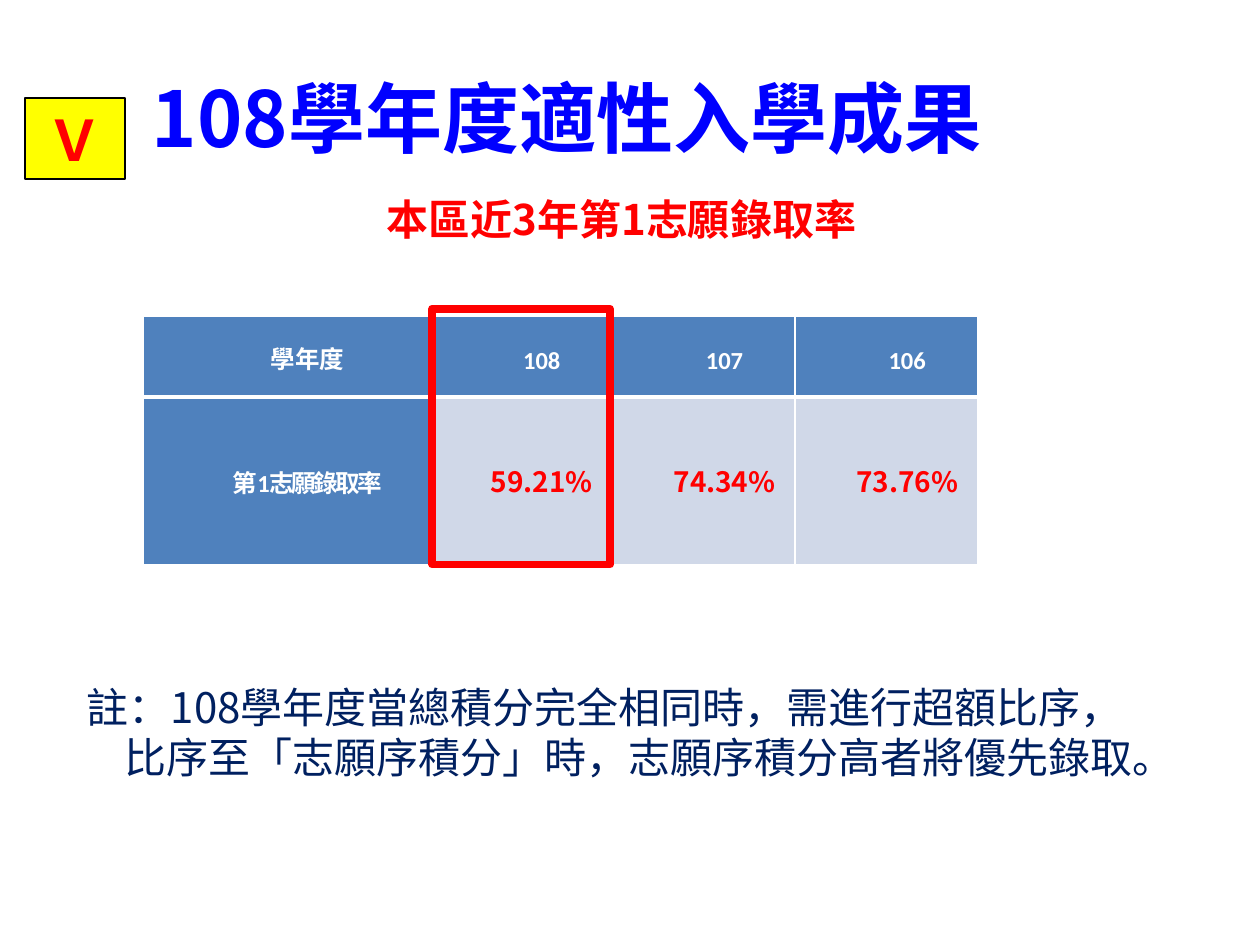
from dataclasses import dataclass

from lxml import etree
from pptx import Presentation
from pptx import util as u
from pptx.dml.color import RGBColor
from pptx.enum import shapes, text
from pptx.oxml.ns import qn


@dataclass(frozen=True)
class Theme:
    blue: str = "0000FF"
    red: str = "FF0000"
    navy: str = "002060"
    yellow: str = "FFFF00"
    black: str = "000000"
    white: str = "FFFFFF"
    header: str = "4F81BD"
    band: str = "D0D8E8"
    sans: str = "Noto Sans CJK SC"
    badge_font: str = "Noto Sans CJK TC"
    label_font: str = "Calibri"
    title_size: int = 44
    badge_size: int = 32
    body_size: int = 24
    rate_size: int = 16
    label_size: int = 14


THEME = Theme()


def rgb(value):
    return RGBColor.from_string(value)


def place(left, top, width, height):
    return [u.Pt(value) for value in (left, top, width, height)]


def add_run(paragraph, wording, size, color, bold=True, latin=THEME.sans,
            east_asian=THEME.sans, spacing=None):
    run = paragraph.add_run()
    run.text = wording
    run.font.size = u.Pt(size)
    run.font.bold = bold
    run.font.color.rgb = rgb(color)
    run.font.name = latin
    properties = run.font._element
    etree.SubElement(properties, qn("a:ea")).set("typeface", east_asian)
    if spacing is not None:
        properties.set("spc", str(int(spacing * 100)))


def set_indent(paragraph, points):
    properties = paragraph._p.get_or_add_pPr()
    properties.set("marL", str(u.Pt(points)))
    properties.set("indent", "0")


def prepare_frame(frame):
    frame.word_wrap = True
    frame.auto_size = text.MSO_AUTO_SIZE.NONE
    frame.vertical_anchor = text.MSO_ANCHOR.MIDDLE


def add_title(slide, wording):
    title = slide.shapes.title
    title.left, title.top, title.width, title.height = place(0, 21.6, 648, 90)
    prepare_frame(title.text_frame)
    paragraph = title.text_frame.paragraphs[0]
    paragraph.alignment = text.PP_ALIGN.CENTER
    add_run(paragraph, wording, THEME.title_size, THEME.blue)


def add_text(slide, box, lines, color, bold, align, hanging=0):
    frame = slide.shapes.add_textbox(*place(*box)).text_frame
    prepare_frame(frame)
    for index, line in enumerate(lines):
        paragraph = frame.add_paragraph() if index else frame.paragraphs[0]
        paragraph.alignment = align
        if index:
            set_indent(paragraph, hanging)
        add_run(paragraph, line, THEME.body_size, color, bold)


def add_box(slide, box, line_color, line_width, fill=None):
    rectangle = slide.shapes.add_shape(shapes.MSO_SHAPE.RECTANGLE, *place(*box))
    rectangle.shadow.inherit = False
    rectangle.line.color.rgb = rgb(line_color)
    rectangle.line.width = u.Pt(line_width)
    if fill:
        rectangle.fill.solid()
        rectangle.fill.fore_color.rgb = rgb(fill)
    else:
        rectangle.fill.background()
    return rectangle


def add_badge(slide, letter):
    badge = add_box(slide, (14.4, 56.2, 56.9, 46.1), THEME.black, 1, THEME.yellow)
    prepare_frame(badge.text_frame)
    paragraph = badge.text_frame.paragraphs[0]
    paragraph.alignment = text.PP_ALIGN.CENTER
    add_run(paragraph, letter, THEME.badge_size, THEME.red,
            latin=THEME.badge_font, east_asian=THEME.badge_font)


def set_borders(cell, widths):
    properties = cell._tc.get_or_add_tcPr()
    for side, width in widths.items():
        border = etree.SubElement(properties, qn(f"a:ln{side}"), w=str(u.Pt(width)))
        fill = etree.SubElement(border, qn("a:solidFill"))
        etree.SubElement(fill, qn("a:srgbClr"), val=THEME.white)


def fill_cell(cell, wording, is_header, is_label):
    set_borders(cell, {"L": 1, "R": 1, "T": 1 if is_header else 3,
                       "B": 3 if is_header else 1})
    cell.fill.solid()
    cell.fill.fore_color.rgb = rgb(
        THEME.header if is_header or is_label else THEME.band)
    cell.margin_left = cell.margin_right = u.Pt(5)
    cell.margin_top = cell.margin_bottom = 0
    cell.vertical_anchor = text.MSO_ANCHOR.MIDDLE
    paragraph = cell.text_frame.paragraphs[0]
    paragraph.alignment = text.PP_ALIGN.CENTER
    paragraph.line_spacing = u.Pt(22)
    set_indent(paragraph, 24)
    if is_header or is_label:
        add_run(paragraph, wording, THEME.label_size, THEME.white,
                latin=THEME.label_font, spacing=0 if is_header else -1.5)
    else:
        add_run(paragraph, wording, THEME.rate_size, THEME.red)


def add_rate_table(slide, rows):
    column_widths = [163.4] + [104.4] * 3
    row_heights = [46, 95.8]
    box = place(82, 180.9, sum(column_widths), sum(row_heights))
    table = slide.shapes.add_table(len(rows), len(rows[0]), *box).table
    for column, width in zip(table.columns, column_widths):
        column.width = u.Pt(width)
    for row, height in zip(table.rows, row_heights):
        row.height = u.Pt(height)
    for r, row in enumerate(rows):
        for c, wording in enumerate(row):
            fill_cell(table.cell(r, c), wording, r == 0, c == 0)


def main():
    deck = Presentation()
    deck.slide_width, deck.slide_height = u.Pt(720), u.Pt(540)
    slide = deck.slides.add_slide(deck.slide_layouts[5])
    add_title(slide, "108學年度適性入學成果")
    add_text(slide, (31, 101.5, 648, 46.8), ["本區近3年第1志願錄取率"],
             THEME.red, True, text.PP_ALIGN.CENTER)
    add_text(slide, (42.5, 394.6, 663.1, 46.8),
             ["註：108學年度當總積分完全相同時，需進行超額比序，",
              "比序至「志願序積分」時，志願序積分高者將優先錄取。"],
             THEME.navy, False, text.PP_ALIGN.LEFT, hanging=21.5)
    add_rate_table(slide, [["學年度", "108", "107", "106"],
                           ["第1志願錄取率", "59.21%", "74.34%", "73.76%"]])
    add_box(slide, (247, 176.4, 101.5, 146.2), THEME.red, 4.5)
    add_badge(slide, "Ｖ")
    deck.save("out.pptx")


if __name__ == "__main__":
    main()
